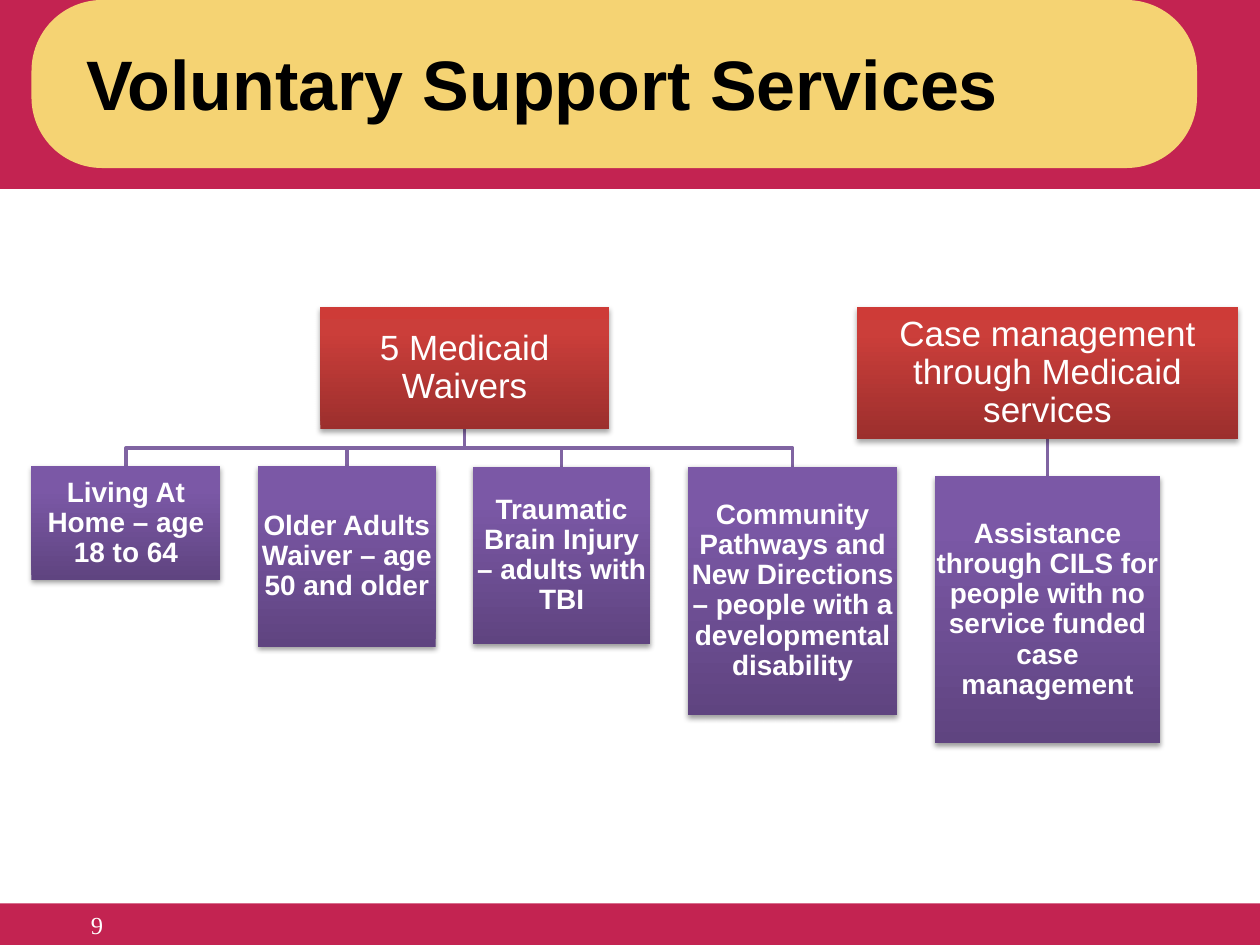
from copy import deepcopy

from lxml.etree import SubElement
from pptx import Presentation
from pptx.dml.color import RGBColor
from pptx.enum.shapes import MSO_CONNECTOR, MSO_SHAPE
from pptx.enum.text import MSO_ANCHOR, MSO_AUTO_SIZE, PP_ALIGN
from pptx.oxml.ns import qn
from pptx.util import Pt

COLORS = {
    "band": "C32351",
    "banner": "F5D373",
    "branch": "8064A2",
    "title": "000000",
    "light": "FFFFFF",
    "shadow": "000000",
}

TITLE = "Voluntary Support Services"
PAGE_NUMBER = "9"

BANDS = [
    (MSO_SHAPE.RECTANGLE, "band", (0, 0, 720, 108)),
    (MSO_SHAPE.RECTANGLE, "band", (0, 516.24, 720, 23.76)),
    (MSO_SHAPE.ROUNDED_RECTANGLE, "banner", (18, 0, 666, 96)),
]

TREES = [
    {
        "service": ("5 Medicaid Waivers", (183, 175.5, 165, 69.75)),
        "programs": [
            ("Living At Home – age 18 to 64", (18, 266.6, 108, 64.8)),
            ("Older Adults Waiver – age 50 and older", (147.4, 266.6, 101.6, 103)),
            ("Traumatic Brain Injury – adults with TBI", (270.2, 266.6, 101.4, 101.4)),
            (
                "Community Pathways and New Directions – people with a "
                "developmental disability",
                (393, 266.6, 119.9, 142),
            ),
        ],
    },
    {
        "service": ("Case management through Medicaid services", (489.6, 175.5, 218, 75.2)),
        "programs": [
            (
                "Assistance through CILS for people with no service funded case management",
                (534.2, 272.2, 128.8, 152.5),
            ),
        ],
    },
]

SERVICE_STYLE = {
    "stops": [(0, "9C2F2D"), (0.8, "CB3E3A"), (1, "CE3B37")],
    "shadow": (35, 1.8),
    "font": {"name": "Arial", "size": Pt(20), "bold": False},
}
PROGRAM_STYLE = {
    "stops": [(0, "5F4480"), (0.8, "7B58A6"), (1, "7C57A8")],
    "shadow": (38, 1.6),
    "font": {"name": "Arial", "size": Pt(16), "bold": True},
}
CARD_FRAME = {
    "word_wrap": True,
    "vertical_anchor": MSO_ANCHOR.MIDDLE,
    "margin_left": Pt(0.7),
    "margin_right": Pt(0.7),
    "margin_top": Pt(0.7),
    "margin_bottom": Pt(0.7),
}
CARD_PARAGRAPH = {"alignment": PP_ALIGN.CENTER, "line_spacing": 0.9}
TITLE_FRAME = {
    "word_wrap": True,
    "auto_size": MSO_AUTO_SIZE.NONE,
    "vertical_anchor": MSO_ANCHOR.MIDDLE,
}
TITLE_PARAGRAPH = {"alignment": PP_ALIGN.LEFT, "line_spacing": 0.85}
TITLE_FONT = {"name": "Arial", "size": Pt(40), "bold": True}
NUMBER_FONT = {"name": "Times New Roman", "size": Pt(14)}


def apply(target, values):
    for key, value in values.items():
        setattr(target, key, value)


def points(box):
    return [Pt(length) for length in box]


def write(shape, text, frame, paragraph, font, color):
    apply(shape.text_frame, frame)
    shape.text_frame.text = text
    line = shape.text_frame.paragraphs[0]
    apply(line, paragraph)
    apply(line.font, font)
    line.font.color.rgb = RGBColor.from_string(COLORS[color])


def add_band(slide, preset, color, box):
    band = slide.shapes.add_shape(preset, *points(box))
    band.shadow.inherit = False
    band.fill.solid()
    band.fill.fore_color.rgb = RGBColor.from_string(COLORS[color])
    band.line.fill.background()
    return band


def add_card(slide, text, box, style):
    card = slide.shapes.add_shape(MSO_SHAPE.RECTANGLE, *points(box))
    card.line.fill.background()
    card.fill.gradient()
    card.fill.gradient_angle = 90
    properties = card._element.spPr
    stop_list = properties.find(".//" + qn("a:gsLst"))
    stop_list.append(deepcopy(stop_list[-1]))
    for stop, (position, color) in zip(card.fill.gradient_stops, style["stops"]):
        stop.position = position
        stop.color.rgb = RGBColor.from_string(color)

    card.shadow.inherit = False
    opacity, distance = style["shadow"]
    shadow = SubElement(
        properties.find(qn("a:effectLst")),
        qn("a:outerShdw"),
        blurRad=str(Pt(3.1)),
        dist=str(Pt(distance)),
        dir="5400000",
        rotWithShape="0",
    )
    tint = SubElement(shadow, qn("a:srgbClr"), val=COLORS["shadow"])
    SubElement(tint, qn("a:alpha"), val=str(opacity * 1000))
    write(card, text, CARD_FRAME, CARD_PARAGRAPH, style["font"], "light")


def add_branch(slide, service_box, program_box):
    left, top, width, height = service_box
    start_x, start_y = left + width / 2, top + height
    end_x, end_y = program_box[0] + program_box[2] / 2, program_box[1]
    if abs(start_x - end_x) < 1:
        branch = slide.shapes.add_connector(
            MSO_CONNECTOR.STRAIGHT, *points((start_x, start_y, start_x, end_y))
        )
        SubElement(branch._element.spPr, qn("a:effectLst"))
    else:
        middle = (start_y + end_y) / 2
        outline = slide.shapes.build_freeform(Pt(start_x), Pt(start_y))
        corners = [(start_x, middle), (end_x, middle), (end_x, end_y)]
        outline.add_line_segments([points(corner) for corner in corners], close=False)
        branch = outline.convert_to_shape()
        branch.fill.background()
        branch.shadow.inherit = False
    branch.line.color.rgb = RGBColor.from_string(COLORS["branch"])
    branch.line.width = Pt(2)


def main():
    deck = Presentation()
    apply(deck, {"slide_width": Pt(720), "slide_height": Pt(540)})
    slide = deck.slides.add_slide(deck.slide_layouts[5])

    for preset, color, box in BANDS:
        band = add_band(slide, preset, color, box)
    band.adjustments[0] = 0.42

    for tree in TREES:
        service, service_box = tree["service"]
        for _, program_box in tree["programs"]:
            add_branch(slide, service_box, program_box)
        add_card(slide, service, service_box, SERVICE_STYLE)
        for program, program_box in tree["programs"]:
            add_card(slide, program, program_box, PROGRAM_STYLE)

    title = slide.shapes.title
    apply(title, dict(zip(("left", "top", "width", "height"), points((42, 6, 576, 90)))))
    write(title, TITLE, TITLE_FRAME, TITLE_PARAGRAPH, TITLE_FONT, "title")
    slide.shapes._spTree.append(title._element)

    number = slide.shapes.add_textbox(*points((0, 516.24, 66, 36)))
    number_paragraph = {"alignment": PP_ALIGN.RIGHT}
    write(number, PAGE_NUMBER, {"word_wrap": True}, number_paragraph, NUMBER_FONT, "light")

    deck.save("out.pptx")


if __name__ == "__main__":
    main()
